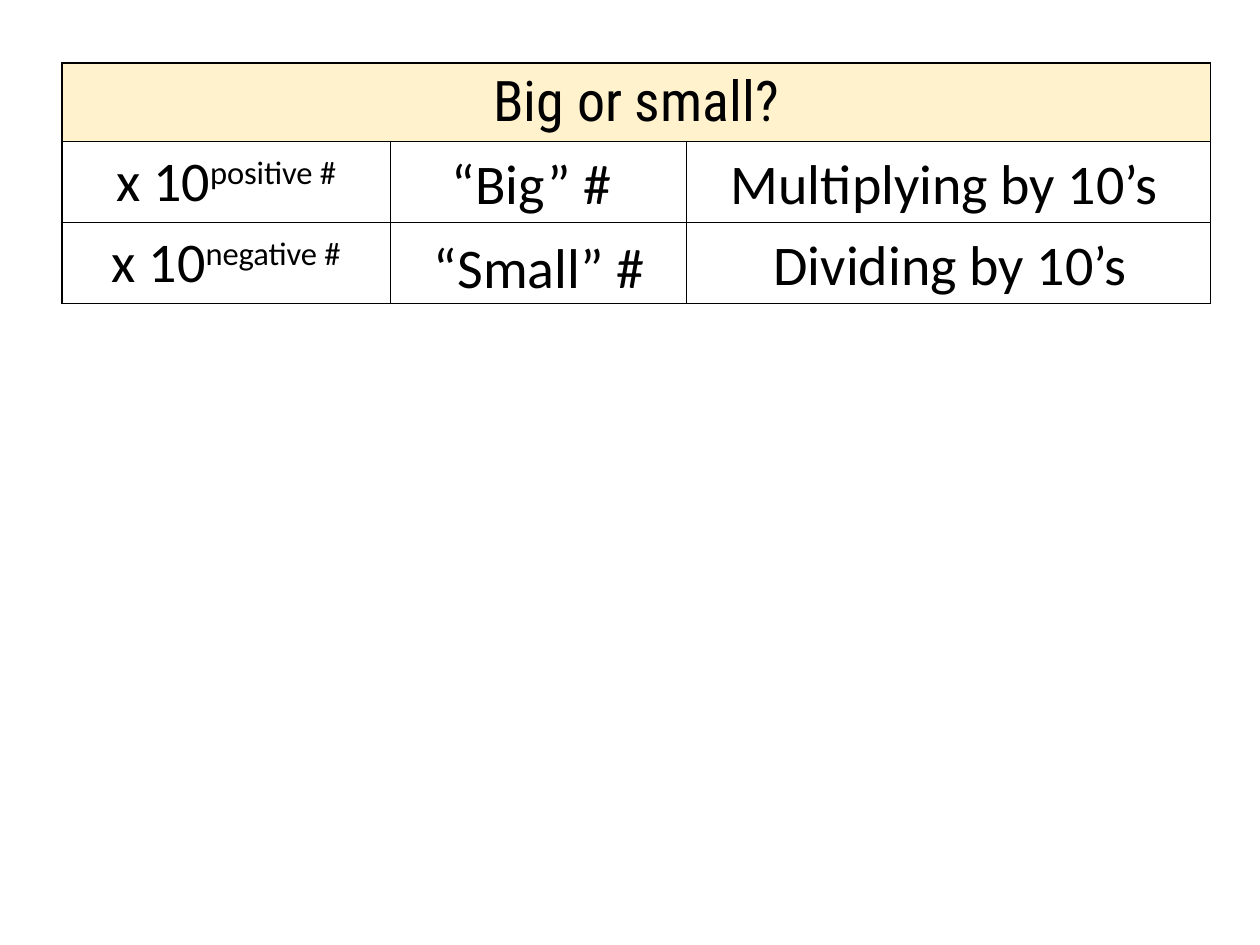
from dataclasses import dataclass

import pptx
import pptx.dml.color
import pptx.enum.shapes
import pptx.enum.text
import pptx.oxml
import pptx.oxml.ns
import pptx.util

Pt = pptx.util.Pt
MIDDLE = pptx.enum.text.MSO_ANCHOR.MIDDLE
COLORS = {"text": "000000", "border": "000000", "heading": "FFF2CC", "paper": "FFFFFF"}
COLUMN_WIDTHS = (187.9, 169.2, 299.5)
ROW_HEIGHTS = (44.6, 46.1, 46.1)
EXPONENTS = ("positive #", "negative #")


@dataclass
class Label:
    text: str
    left: float
    top: float
    width: float
    height: float


LABELS = (
    Label("“Big” #", 244.8, 87.8, 118.1, 33.1),
    Label("“Small” #", 234, 139, 148.3, 26.6),
    Label("Multiplying by 10’s", 396.7, 87.8, 285.8, 33.1),
    Label("Dividing by 10’s", 420.5, 133.9, 244.8, 33.1),
)


def color(name: str) -> pptx.dml.color.RGBColor:
    return pptx.dml.color.RGBColor.from_string(COLORS[name])


def write_text(frame, text: str, *, superscript: str = "", font: str = "Calibri", size: float = 32) -> None:
    paragraph = frame.paragraphs[0]
    paragraph.alignment = pptx.enum.text.PP_ALIGN.CENTER
    for content, baseline in ((text, 0), (superscript, 30000)):
        if not content:
            continue
        run = paragraph.add_run()
        run.text = content
        run.font.name = font
        run.font.size = Pt(size)
        run.font.color.rgb = color("text")
        if baseline:
            run.font._element.set("baseline", str(baseline))


def add_borders(cell) -> None:
    properties = cell._tc.get_or_add_tcPr()
    namespace = pptx.oxml.ns.nsdecls("a")
    for position, side in enumerate(("lnL", "lnR", "lnT", "lnB")):
        border = pptx.oxml.parse_xml(
            f'<a:{side} {namespace} w="{Pt(1)}"><a:solidFill>'
            f'<a:srgbClr val="{COLORS["border"]}"/></a:solidFill></a:{side}>'
        )
        properties.insert(position, border)


def add_number_table(slide) -> None:
    frame = slide.shapes.add_table(
        len(ROW_HEIGHTS), len(COLUMN_WIDTHS),
        Pt(35.3), Pt(36), Pt(sum(COLUMN_WIDTHS)), Pt(sum(ROW_HEIGHTS)),
    )
    table = frame.table
    table.first_row = False
    table.horz_banding = False
    for column, width in zip(table.columns, COLUMN_WIDTHS):
        column.width = Pt(width)
    for row, height in zip(table.rows, ROW_HEIGHTS):
        row.height = Pt(height)
    for cell in table.iter_cells():
        cell.fill.background()
        add_borders(cell)

    heading = table.cell(0, 0)
    heading.merge(table.cell(0, len(COLUMN_WIDTHS) - 1))
    heading.fill.solid()
    heading.fill.fore_color.rgb = color("heading")
    write_text(heading.text_frame, "Big or small?", font="Roboto Condensed")

    for row_index, exponent in enumerate(EXPONENTS, start=1):
        cell = table.cell(row_index, 0)
        cell.vertical_anchor = MIDDLE
        write_text(cell.text_frame, "x 10", superscript=exponent)


def add_label(slide, label: Label) -> None:
    shape = slide.shapes.add_shape(
        pptx.enum.shapes.MSO_SHAPE.RECTANGLE,
        Pt(label.left), Pt(label.top), Pt(label.width), Pt(label.height),
    )
    shape.shadow.inherit = False
    shape.fill.solid()
    shape.fill.fore_color.rgb = color("paper")
    shape.line.fill.background()
    shape.text_frame.word_wrap = True
    shape.text_frame.vertical_anchor = MIDDLE
    write_text(shape.text_frame, label.text)


def main() -> None:
    presentation = pptx.Presentation()
    presentation.slide_width = Pt(720)
    presentation.slide_height = Pt(540)
    slide = presentation.slides.add_slide(presentation.slide_layouts[6])
    add_number_table(slide)
    for label in LABELS:
        add_label(slide, label)
    presentation.save("out.pptx")


if __name__ == "__main__":
    main()
